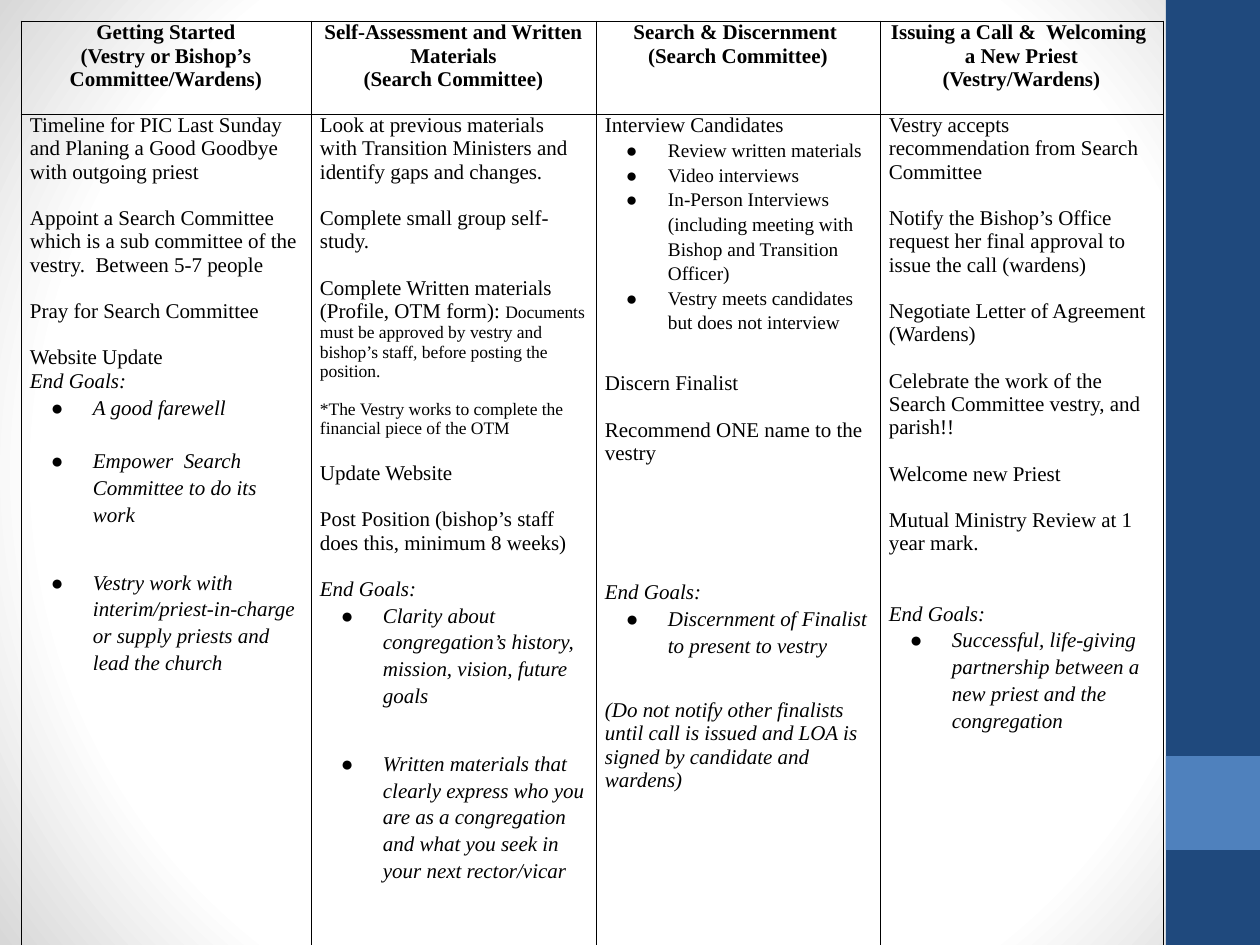
import pptx
import pptx.dml.color
import pptx.enum.shapes
import pptx.enum.text
import pptx.oxml
import pptx.oxml.ns
import pptx.util

THEME = {
    "font": "Times New Roman", "text": "000000", "navy": "1F497D", "blue": "4F81BD",
    "white": "FFFFFF", "grey": "D8D8D8", "body": 12, "small": 11, "note": 10,
}
EMU_PER_PX = 914400 / 126
NAMESPACE = 'xmlns:a="http://schemas.openxmlformats.org/drawingml/2006/main"'


def px(length):
    return pptx.util.Emu(round(length * EMU_PER_PX))


def add_run(paragraph, text, size=THEME["body"], bold=False, italic=False):
    run = paragraph.add_run()
    run.text = text
    run.font.name = THEME["font"]
    run.font.size = pptx.util.Pt(size)
    run.font.bold = bold
    run.font.italic = italic
    run.font.color.rgb = pptx.dml.color.RGBColor.from_string(THEME["text"])


# Run styles: size, italic, bulleted
STYLES = {
    "plain": (THEME["body"], False, False),
    "note": (THEME["note"], False, False),
    "italic": (THEME["body"], True, False),
    "step": (THEME["small"], False, True),
    "goal": (THEME["body"], True, True),
}

# Each phase: width, heading lines, then body paragraphs as (style, gap above, text)
PHASES = [
    (290, ["Getting Started", "(Vestry or Bishop’s Committee/Wardens)"], [
        ("plain", 0, "Timeline for PIC Last Sunday and Planing a Good Goodbye with outgoing priest"),
        ("plain", 23, "Appoint a Search Committee which is a sub committee of the vestry.  "
                      "Between 5-7 people"),
        ("plain", 23, "Pray for Search Committee"),
        ("plain", 23, "Website Update"),
        ("italic", 0, "End Goals:"),
        ("goal", 0, "A good farewell"),
        ("goal", 27, "Empower  Search Committee to do its work"),
        ("goal", 41, "Vestry work with interim/priest-in-charge or supply priests and "
                     "lead the church"),
    ]),
    (285, ["Self-Assessment and Written Materials", "(Search Committee)"], [
        ("plain", 0, "Look at previous materials with Transition Ministers and identify "
                     "gaps and changes."),
        ("plain", 23, "Complete small group self-study."),
        ("plain", 23, "Complete Written materials (Profile, OTM form): "),
        ("note", None, "Documents must be approved by vestry and bishop’s staff, "
                       "before posting the position."),
        ("note", 19, "*The Vestry works to complete the financial piece of the OTM"),
        ("plain", 23, "Update Website"),
        ("plain", 23, "Post Position (bishop’s staff does this, minimum 8 weeks)"),
        ("italic", 23, "End Goals:"),
        ("goal", 0, "Clarity about congregation’s history, mission, vision, future goals"),
        ("goal", 41, "Written materials that clearly express who you are as a congregation "
                     "and what you seek in your next rector/vicar"),
    ]),
    (284, ["Search & Discernment ", "(Search Committee)"], [
        ("plain", 0, "Interview Candidates"),
        ("step", 0, "Review written materials"),
        ("step", 0, "Video interviews"),
        ("step", 0, "In-Person Interviews (including meeting with Bishop and Transition Officer)"),
        ("step", 0, "Vestry meets candidates but does not interview"),
        ("plain", 38, "Discern Finalist"),
        ("plain", 23, "Recommend ONE name to the vestry"),
        ("italic", 116, "End Goals:"),
        ("goal", 0, "Discernment of Finalist to present to vestry"),
        ("italic", 41, "(Do not notify other finalists until call is issued and LOA is "
                       "signed by candidate and wardens)"),
    ]),
    (283, ["Issuing a Call &  Welcoming ", "a New Priest (Vestry/Wardens)"], [
        ("plain", 0, "Vestry accepts recommendation from Search Committee"),
        ("plain", 23, "Notify the Bishop’s Office request her final approval to issue "
                      "the call (wardens)"),
        ("plain", 23, "Negotiate Letter of Agreement (Wardens)"),
        ("plain", 23, "Celebrate the work of the Search Committee vestry, and parish!!"),
        ("plain", 23, "Welcome new Priest"),
        ("plain", 23, "Mutual Ministry Review at 1 year mark."),
        ("italic", 47, "End Goals:"),
        ("goal", 0, "Successful, life-giving partnership between a new priest and "
                    "the congregation"),
    ]),
]

presentation = pptx.Presentation()
presentation.slide_width, presentation.slide_height = px(1260), px(945)
slide = presentation.slides.add_slide(presentation.slide_layouts[6])

# Background: white centre fading to grey corners
slide.background.fill.gradient()
gradient = slide.element.find(".//" + pptx.oxml.ns.qn("a:gradFill"))
stops = "".join(
    f'<a:gs pos="{position}000"><a:srgbClr val="{THEME[name]}"/></a:gs>'
    for position, name in [(0, "white"), (75, "white"), (100, "grey")])
gradient.getparent().replace(gradient, pptx.oxml.parse_xml(
    f'<a:gradFill {NAMESPACE} rotWithShape="1"><a:gsLst>{stops}</a:gsLst>'
    '<a:path path="circle"><a:fillToRect l="50000" t="50000" r="50000" b="50000"/>'
    '</a:path></a:gradFill>'))

# Side band with its lighter square
for top, height, name in [(0, 945, "navy"), (756, 94, "blue")]:
    shape = slide.shapes.add_shape(
        pptx.enum.shapes.MSO_SHAPE.RECTANGLE, px(1166), px(top), px(94), px(height))
    shape.shadow.inherit = False
    shape.fill.solid()
    shape.fill.fore_color.rgb = pptx.dml.color.RGBColor.from_string(THEME[name])
    shape.line.fill.background()

# Table grid
row_heights = [93, 832]
table = slide.shapes.add_table(
    len(row_heights), len(PHASES), px(21), px(21),
    px(sum(phase[0] for phase in PHASES)), px(sum(row_heights))).table
table.first_row = table.horz_banding = False
for row, height in zip(table.rows, row_heights):
    row.height = px(height)
for cell in table.iter_cells():
    cell.margin_left = cell.margin_right = px(9)
    cell.margin_top = cell.margin_bottom = 0
    cell.fill.background()
    properties = cell._tc.get_or_add_tcPr()
    for index, side in enumerate("LRTB"):
        properties.insert(index, pptx.oxml.parse_xml(
            f'<a:ln{side} {NAMESPACE} w="6350"><a:solidFill>'
            f'<a:srgbClr val="{THEME["text"]}"/></a:solidFill></a:ln{side}>'))

# Phase columns
for column, (width, heading, body) in enumerate(PHASES):
    table.columns[column].width = px(width)

    frame = table.cell(0, column).text_frame
    for index, text in enumerate(heading):
        paragraph = frame.add_paragraph() if index else frame.paragraphs[0]
        paragraph.alignment = pptx.enum.text.PP_ALIGN.CENTER
        add_run(paragraph, text, bold=True)

    frame = table.cell(1, column).text_frame
    for index, (style, gap, text) in enumerate(body):
        size, italic, bulleted = STYLES[style]
        # A gap of None continues the paragraph above
        if gap is not None:
            paragraph = frame.add_paragraph() if index else frame.paragraphs[0]
            paragraph.space_before = px(gap)
            if bulleted:
                paragraph.line_spacing = 1.15
                properties = paragraph._p.get_or_add_pPr()
                properties.set("marL", str(px(63)))
                properties.set("indent", str(px(-42)))
                for bullet in (
                        f'<a:buClr {NAMESPACE}><a:srgbClr val="{THEME["text"]}"/></a:buClr>',
                        f'<a:buFont {NAMESPACE} typeface="{THEME["font"]}"/>',
                        f'<a:buChar {NAMESPACE} char="●"/>'):
                    properties.append(pptx.oxml.parse_xml(bullet))
        add_run(paragraph, text, size, italic=italic)

presentation.save("out.pptx")
